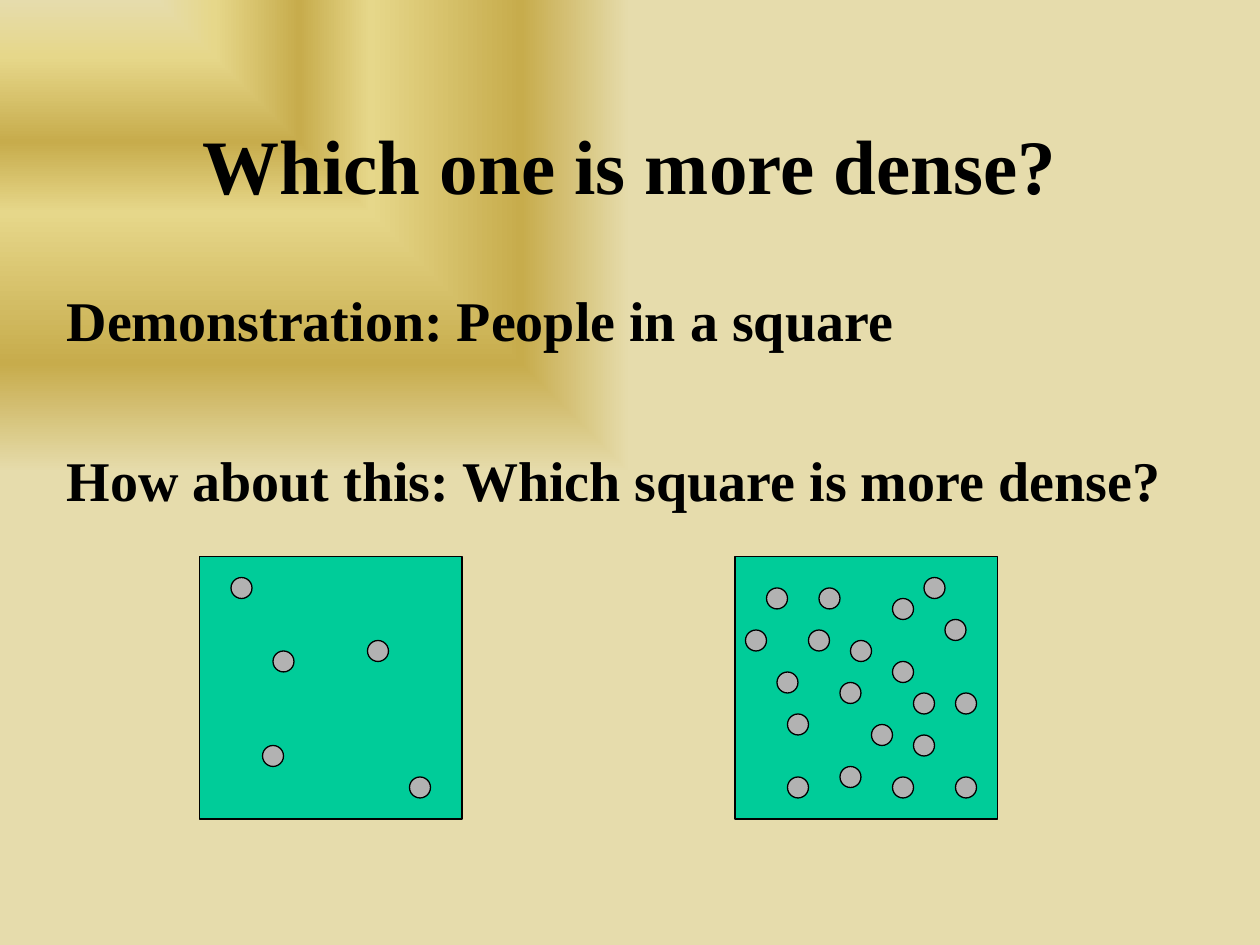
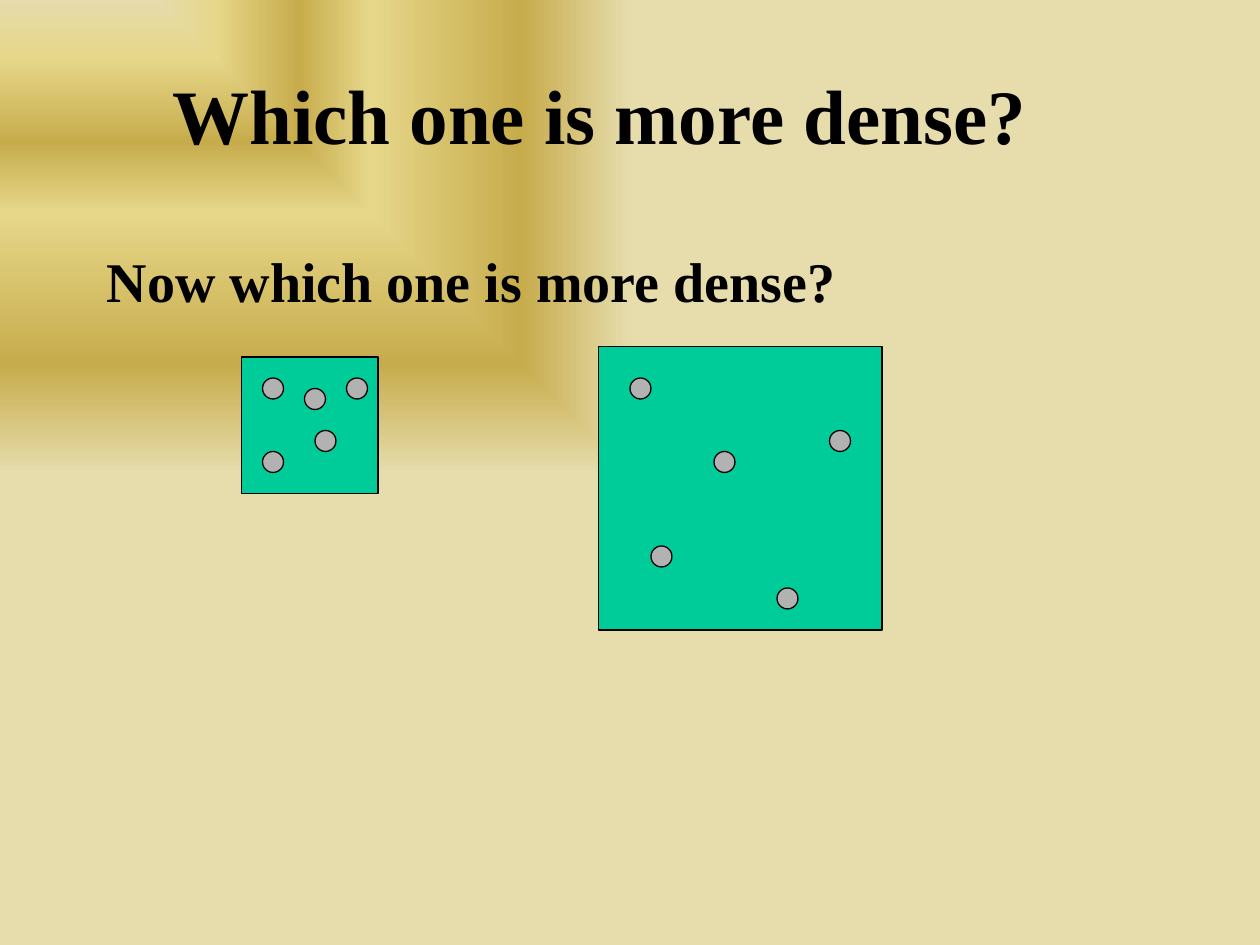
from pptx import Presentation
from pptx.dml.color import RGBColor as RGB
from pptx.enum.shapes import MSO_SHAPE as Shape
from pptx.enum.text import MSO_ANCHOR as Anchor, PP_ALIGN as Align
from pptx.oxml import parse_xml
from pptx.oxml.ns import nsdecls, qn
from pptx.util import Pt

TITLE = "Which one is more dense?"
SLIDES = [
    {
        "title": (54, 48.24),
        "body": (30.96, 156.24, 663.12),
        "lines": ["Demonstration: People in a square",
                  "How about this: Which square is more dense?"],
        "squares": [
            (19, 53, 25, [(3, 2), (6, 18), (16, 8), (20, 21), (7, 9)]),
            (70, 53, 25, [(3, 3), (8, 3), (4, 11), (15, 4), (10, 20),
                          (10, 12), (15, 10), (20, 6), (13, 16), (21, 13),
                          (5, 21), (21, 21), (1, 7), (7, 7), (15, 21),
                          (11, 8), (5, 15), (17, 13), (17, 17), (18, 2)]),
        ],
    },
    {
        "title": (36.72, 20.16),
        "body": (54, 133.92, 612),
        "lines": ["Now which one is more dense?"],
        "squares": [
            (23, 34, 13, [(2, 2), (6, 3), (2, 9), (7, 7), (10, 2)]),
            (57, 33, 27, [(3, 3), (11, 10), (5, 19), (17, 23), (22, 8)]),
        ],
    },
]

FONT = "Times New Roman"
BLACK = RGB(0x00, 0x00, 0x00)
GREEN = RGB(0x00, 0xCC, 0x99)
GRAY = RGB(0xB2, 0xB2, 0xB2)
SAND = RGB(0xE6, 0xDC, 0xAC)
STRAW = RGB(0xE6, 0xD7, 0x8A)
GOLD = RGB(0xC7, 0xAC, 0x4C)
STOPS = [(0, SAND), (12, STRAW), (30, GOLD), (45, STRAW), (77, GOLD), (100, SAND)]

UNIT = 6
DOT = 2
LINE_GAP = 52.9


def paint_back(master):
    master.background.fill.solid()
    stops = "".join(
        f'<a:gs pos="{pos * 1000}"><a:srgbClr val="{color}"/></a:gs>'
        for pos, color in STOPS)
    grad = parse_xml(
        f'<a:gradFill {nsdecls("a")} rotWithShape="0"><a:gsLst>{stops}</a:gsLst>'
        '<a:path path="rect"><a:fillToRect r="100000" b="100000"/></a:path>'
        '</a:gradFill>')
    solid = master.element.find(".//" + qn("p:bgPr")).find(qn("a:solidFill"))
    solid.getparent().replace(solid, grad)


def add_text(slide, left, top, width, height, lines, size):
    frame = slide.shapes.add_textbox(
        Pt(left), Pt(top), Pt(width), Pt(height)).text_frame
    frame.word_wrap = True
    frame.text = "\n".join(lines)
    for para in frame.paragraphs:
        for run in para.runs:
            font = run.font
            font.name, font.size, font.bold = FONT, Pt(size), True
            font.color.rgb = BLACK
    return frame


def add_title(slide, left, top):
    frame = add_text(slide, left, top, 612, 90, [TITLE], 44)
    frame.vertical_anchor = Anchor.MIDDLE
    frame.paragraphs[0].alignment = Align.CENTER


def add_body(slide, left, top, width, lines):
    frame = add_text(slide, left, top, width, 324, lines, 32)
    frame.margin_top = Pt(7.2)
    for para in frame.paragraphs[1:]:
        para.space_before = Pt(LINE_GAP)


def add_form(slide, kind, col, row, size, color):
    form = slide.shapes.add_shape(
        kind, *(Pt(n * UNIT) for n in (col, row, size, size)))
    form.shadow.inherit = False
    form.fill.solid()
    form.fill.fore_color.rgb = color
    form.line.color.rgb = BLACK
    form.line.width = Pt(0.75)


def main():
    deck = Presentation()
    deck.slide_width, deck.slide_height = Pt(720), Pt(540)
    paint_back(deck.slide_master)
    for page in SLIDES:
        slide = deck.slides.add_slide(deck.slide_layouts[6])
        add_title(slide, *page["title"])
        add_body(slide, *page["body"], page["lines"])
        for col, row, size, dots in page["squares"]:
            add_form(slide, Shape.RECTANGLE, col, row, size, GREEN)
            for x, y in dots:
                add_form(slide, Shape.OVAL, col + x, row + y, DOT, GRAY)
    deck.save("out.pptx")


if __name__ == "__main__":
    main()
